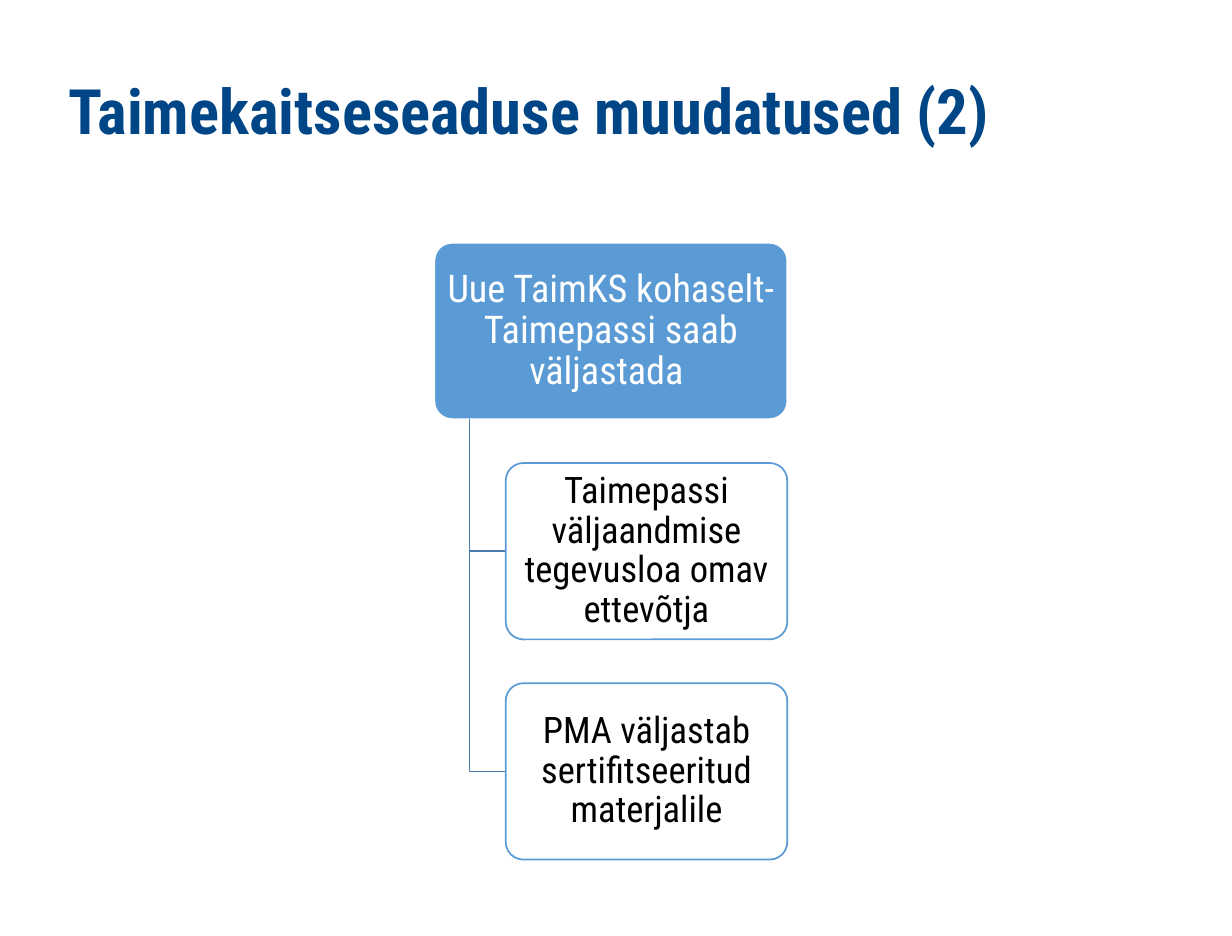
"""Builds a slide with a title and a small hierarchy of plant passport issuers."""
import pptx
import pptx.util
import pptx.dml.color
import pptx.enum.shapes
import pptx.enum.text

Inches = pptx.util.Inches
Pt = pptx.util.Pt

TITLE = "Taimekaitseseaduse muudatused (2)"
PARENT = "Uue TaimKS kohaselt- Taimepassi saab väljastada "
CHILDREN = [
    "Taimepassi väljaandmise tegevusloa omav ettevõtja",
    "PMA väljastab sertifitseeritud materjalile",
]
COLORS = {
    "title": "004586",
    "blue": "5B9BD5",
    "connector": "497CAB",
    "white": "FFFFFF",
    "black": "000000",
}
FONT = "Roboto Condensed"
CM_PER_INCH = 2.54
SLIDE_WIDTH, SLIDE_HEIGHT = 25 / CM_PER_INCH, 19 / CM_PER_INCH
PARENT_LEFT, TOP, PARENT_WIDTH = 3.47, 1.94, 2.82
CHILD_LEFT, CHILD_WIDTH = 4.04, 2.25
BOX_HEIGHT, STEP = 1.41, 1.76
TRUNK_LEFT = 3.75


def color(name):
    return pptx.dml.color.RGBColor.from_string(COLORS[name])


def write(shape, text, size, font_color, spacing, insets):
    frame = shape.text_frame
    frame.word_wrap = True
    (frame.margin_left, frame.margin_top,
     frame.margin_right, frame.margin_bottom) = map(Inches, insets)
    paragraph = frame.paragraphs[0]
    paragraph.text = text
    paragraph.line_spacing = spacing
    paragraph.font.name = FONT
    paragraph.font.size = Pt(size)
    paragraph.font.color.rgb = color(font_color)
    return paragraph


def add_title(slide):
    box = slide.shapes.add_textbox(Inches(0.55), Inches(0.59), Inches(8.66), Inches(1.18))
    paragraph = write(box, TITLE, 36, "title", 0.88, (0, 0.06, 0, 0))
    paragraph.font.bold = True


def add_box(slide, left, top, width, text, size, fill, line, font_color, side_inset):
    shape = slide.shapes.add_shape(
        pptx.enum.shapes.MSO_SHAPE.ROUNDED_RECTANGLE,
        Inches(left), Inches(top), Inches(width), Inches(BOX_HEIGHT))
    shape.adjustments[0] = 0.1
    shape.shadow.inherit = False
    shape.fill.solid()
    shape.fill.fore_color.rgb = color(fill)
    shape.line.color.rgb = color(line)
    shape.line.width = Pt(1)
    paragraph = write(shape, text, size, font_color, 0.9, (side_inset, 0.03, side_inset, 0.03))
    paragraph.alignment = pptx.enum.text.PP_ALIGN.CENTER
    shape.text_frame.vertical_anchor = pptx.enum.text.MSO_ANCHOR.MIDDLE


def add_branch(slide, child_top):
    middle = Inches(child_top + BOX_HEIGHT / 2)
    builder = slide.shapes.build_freeform(Inches(TRUNK_LEFT), Inches(TOP + BOX_HEIGHT))
    builder.add_line_segments(
        [(Inches(TRUNK_LEFT), middle), (Inches(CHILD_LEFT), middle)], close=False)
    branch = builder.convert_to_shape()
    branch.shadow.inherit = False
    branch.fill.background()
    branch.line.color.rgb = color("connector")
    branch.line.width = Pt(1)


def main():
    presentation = pptx.Presentation()
    presentation.slide_width = Inches(SLIDE_WIDTH)
    presentation.slide_height = Inches(SLIDE_HEIGHT)
    slide = presentation.slides.add_slide(presentation.slide_layouts[6])
    add_title(slide)
    add_box(slide, PARENT_LEFT, TOP, PARENT_WIDTH, PARENT, 22, "blue", "white", "white", 0.05)
    for row, text in enumerate(CHILDREN, start=1):
        child_top = TOP + row * STEP
        add_branch(slide, child_top)
        add_box(slide, CHILD_LEFT, child_top, CHILD_WIDTH, text, 21,
                "white", "blue", "black", 0.04)
    presentation.save("out.pptx")


if __name__ == "__main__":
    main()
